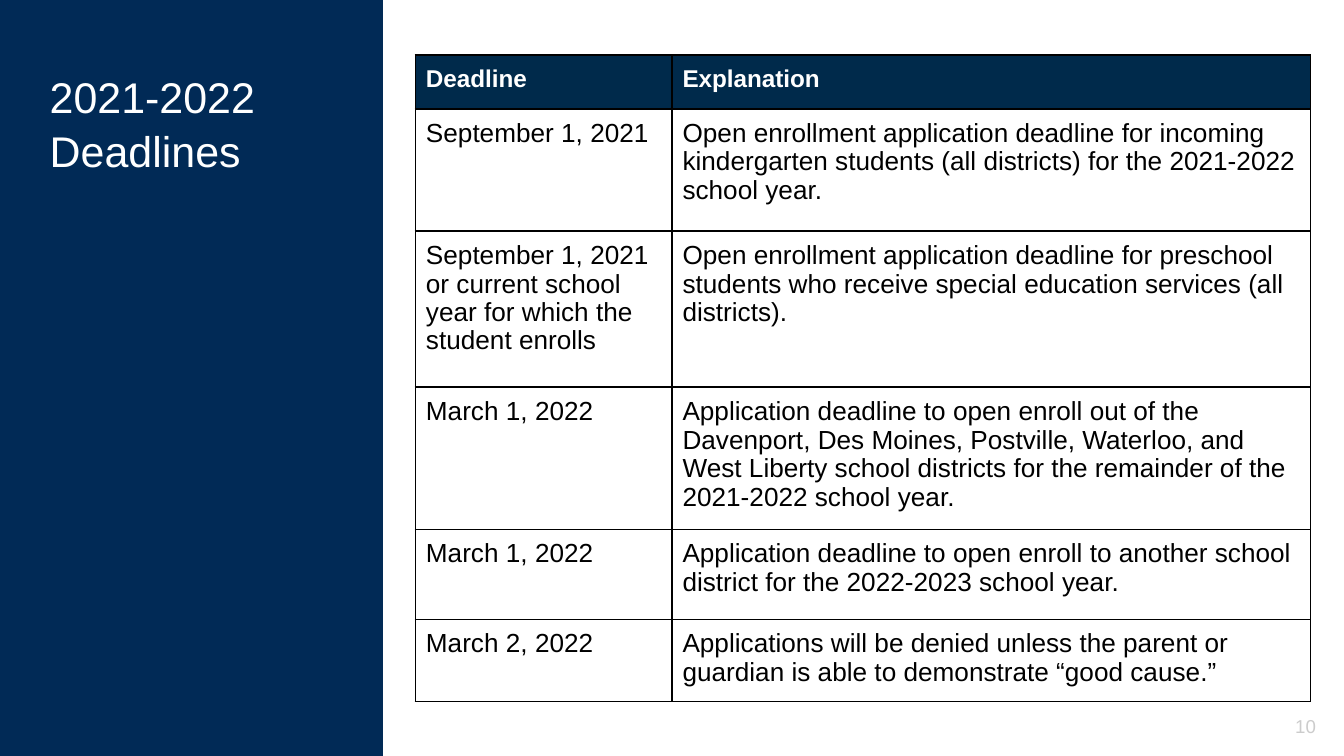
import pptx
import pptx.dml.color
import pptx.enum.shapes
import pptx.enum.text
import pptx.oxml
import pptx.oxml.ns
import pptx.util

Cm = pptx.util.Cm
Pt = pptx.util.Pt
ALIGN = pptx.enum.text.PP_ALIGN
ANCHOR = pptx.enum.text.MSO_ANCHOR

COLORS = {
    "panel": "012A56",
    "header": "002A4B",
    "white": "FFFFFF",
    "black": "000000",
    "number": "CCCCCC",
}

DEADLINES = [
    ("Deadline", "Explanation"),
    ("September 1, 2021",
     "Open enrollment application deadline for incoming kindergarten students "
     "(all districts) for the 2021-2022 school year."),
    ("September 1, 2021 or current school year for which the student enrolls",
     "Open enrollment application deadline for preschool students who receive "
     "special education services (all districts)."),
    ("March 1, 2022",
     "Application deadline to open enroll out of the Davenport, Des Moines, "
     "Postville, Waterloo, and West Liberty school districts for the remainder "
     "of the 2021-2022 school year."),
    ("March 1, 2022",
     "Application deadline to open enroll to another school district for the "
     "2022-2023 school year."),
    ("March 2, 2022",
     "Applications will be denied unless the parent or guardian is able to "
     "demonstrate “good cause.”"),
]
COLUMN_WIDTHS = [4.85, 12.07]
ROW_HEIGHTS = [1.02, 2.31, 2.95, 2.69, 1.7, 1.55]


class DeckStyle:
    """Holds the style and the current slide."""

    font = "Arial"
    text_inset = Cm(0.25)
    cell_inset = Cm(0.2)

    def __init__(self, slide):
        self.slide = slide

    def color(self, name):
        return pptx.dml.color.RGBColor.from_string(COLORS[name])

    def add_text(self, frame, text, size, color, bold=False, align=ALIGN.LEFT, spacing=1.0):
        paragraph = frame.paragraphs[0]
        paragraph.alignment = align
        paragraph.line_spacing = spacing
        run = paragraph.add_run()
        run.text = text
        run.font.name = self.font
        run.font.size = Pt(size)
        run.font.bold = bold
        run.font.color.rgb = self.color(color)

    def set_frame(self, frame, anchor):
        frame.word_wrap = True
        frame.auto_size = pptx.enum.text.MSO_AUTO_SIZE.NONE
        frame.vertical_anchor = anchor
        frame.margin_left = frame.margin_right = self.text_inset
        frame.margin_top = frame.margin_bottom = self.text_inset

    def panel(self, left, top, width, height):
        panel = self.slide.shapes.add_shape(
            pptx.enum.shapes.MSO_SHAPE.RECTANGLE, Cm(left), Cm(top), Cm(width), Cm(height))
        panel.shadow.inherit = False
        panel.fill.solid()
        panel.fill.fore_color.rgb = self.color("panel")
        panel.line.fill.background()
        # Behind the title placeholder
        tree = self.slide.shapes._spTree
        tree.remove(panel._element)
        tree.insert(2, panel._element)

    def title(self, text, left, top, width, height):
        title = self.slide.shapes.title
        title.left, title.top = Cm(left), Cm(top)
        title.width, title.height = Cm(width), Cm(height)
        self.set_frame(title.text_frame, ANCHOR.TOP)
        self.add_text(title.text_frame, text, 23, "white", spacing=1.05)

    def slide_number(self, text, left, top, width, height):
        number = self.slide.shapes.add_textbox(Cm(left), Cm(top), Cm(width), Cm(height))
        self.set_frame(number.text_frame, ANCHOR.MIDDLE)
        self.add_text(number.text_frame, text, 10, "number", align=ALIGN.RIGHT)

    def borders(self, cell):
        properties = cell._tc.get_or_add_tcPr()
        for position, side in enumerate(("lnL", "lnR", "lnT", "lnB")):
            properties.insert(position, pptx.oxml.parse_xml(
                f'<a:{side} {pptx.oxml.ns.nsdecls("a")} w="{Pt(1)}"><a:solidFill>'
                f'<a:srgbClr val="{COLORS["black"]}"/></a:solidFill></a:{side}>'))

    def table(self, rows, widths, heights, left, top):
        table = self.slide.shapes.add_table(
            len(rows), len(widths), Cm(left), Cm(top),
            Cm(sum(widths)), Cm(sum(heights))).table
        table.horz_banding = False
        for column, width in zip(table.columns, widths):
            column.width = Cm(width)
        for index, (row, height, texts) in enumerate(zip(table.rows, heights, rows)):
            row.height = Cm(height)
            for cell, text in zip(row.cells, texts):
                cell.margin_left = cell.margin_right = self.cell_inset
                cell.margin_top = cell.margin_bottom = self.cell_inset
                if index == 0:
                    cell.fill.solid()
                    cell.fill.fore_color.rgb = self.color("header")
                    self.add_text(cell.text_frame, text, 13, "white", bold=True)
                else:
                    cell.fill.background()
                    self.add_text(cell.text_frame, text, 14, "black", spacing=0.97)
                self.borders(cell)


def main():
    deck = pptx.Presentation()
    deck.slide_width, deck.slide_height = Cm(25.4), Cm(14.29)
    style = DeckStyle(deck.slides.add_slide(deck.slide_layouts[5]))

    # Left panel with the title
    style.panel(-0.05, 0, 7.29, 14.29)
    style.title("2021-2022 Deadlines", 0.69, 1.04, 5.82, 12.19)

    # Deadlines table
    style.table(DEADLINES, COLUMN_WIDTHS, ROW_HEIGHTS, 7.85, 1.04)

    # Slide number
    style.slide_number("10", 23.77, 13.18, 1.35, 1.09)

    deck.save("out.pptx")


if __name__ == "__main__":
    main()
